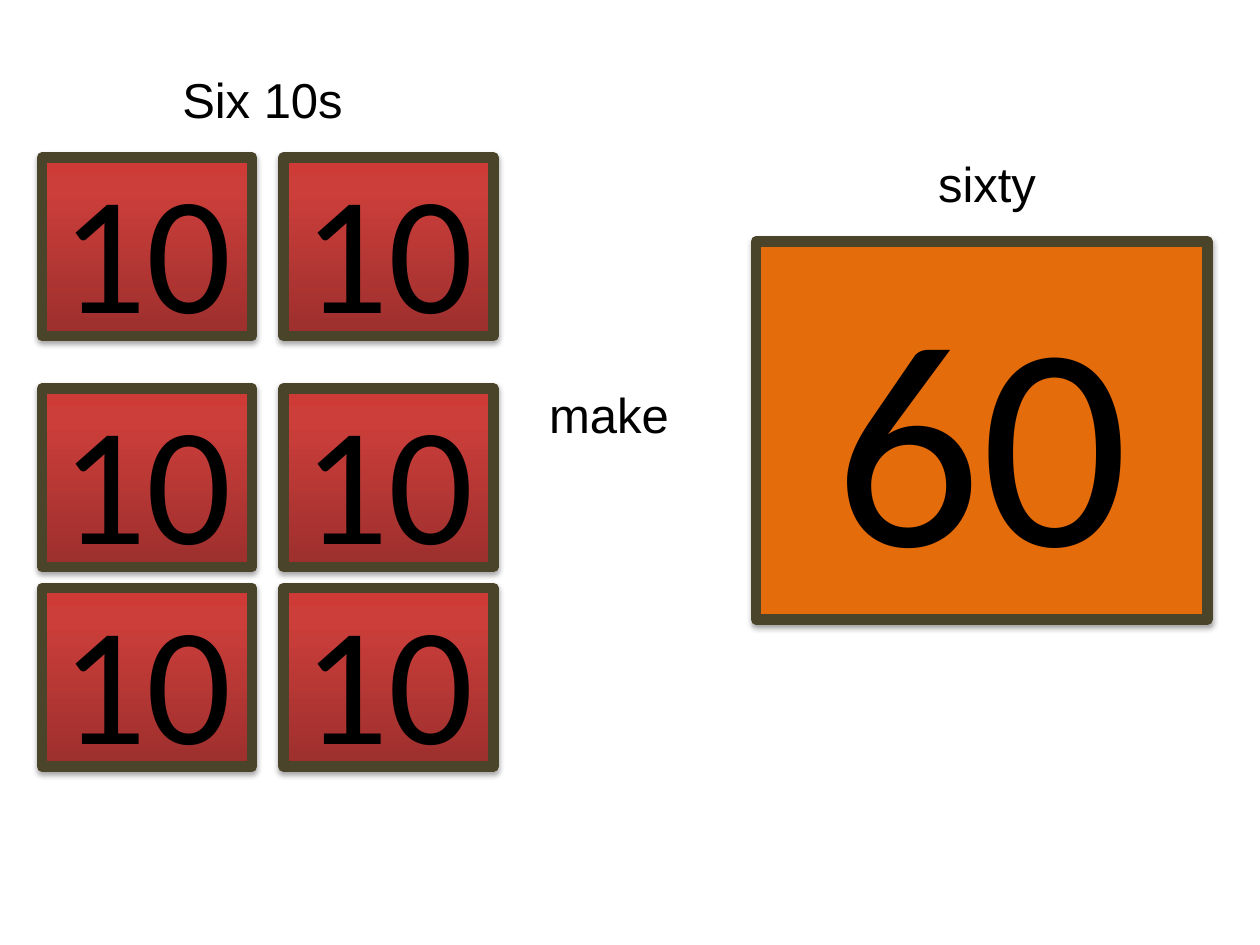
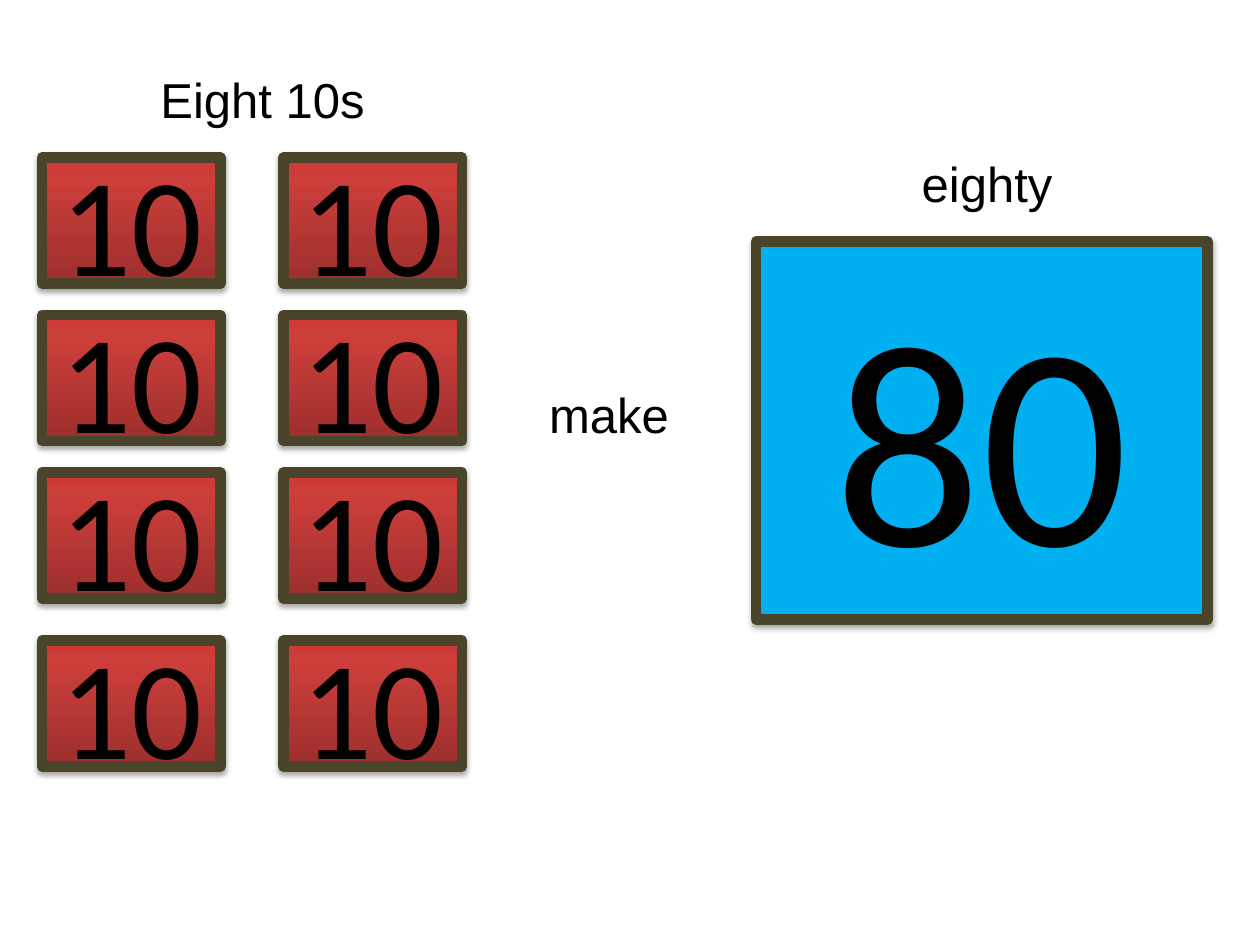
from lxml import etree
from pptx import Presentation
from pptx.dml.color import RGBColor
from pptx.enum.shapes import MSO_SHAPE
from pptx.enum.text import MSO_ANCHOR, MSO_AUTO_SIZE, PP_ALIGN
from pptx.oxml import parse_xml
from pptx.oxml.ns import nsdecls, qn
from pptx.util import Inches, Pt

RECT = MSO_SHAPE.RECTANGLE
MIDDLE, TOP = MSO_ANCHOR.MIDDLE, MSO_ANCHOR.TOP
CENTER = PP_ALIGN.CENTER
GROW = MSO_AUTO_SIZE.SHAPE_TO_FIT_TEXT

BLACK = RGBColor(0x00, 0x00, 0x00)
BORDER = RGBColor(0x4A, 0x45, 0x2A)
ORANGE = RGBColor(0xE4, 0x6C, 0x0A)
BLUE = RGBColor(0x00, 0xB0, 0xF0)
RED_STOPS = (
    (0, RGBColor(0x9C, 0x2F, 0x2D)),
    (80, RGBColor(0xCB, 0x3E, 0x3A)),
    (100, RGBColor(0xCE, 0x3B, 0x37)),
)

# Grid of 120 columns by 90 rows, twelve cells to the inch
CELL = Inches(1) // 12
TITLE_ONLY = 5
TEN_COLUMNS = (4, 27)
LABEL_SIZE = (32, 6.84)


def cells(*counts):
    return [round(n * CELL) for n in counts]


def set_text(sp, text, size, font, anchor):
    tf = sp.text_frame
    tf.text = text
    tf.word_wrap = True
    tf.vertical_anchor = anchor
    p = tf.paragraphs[0]
    p.alignment = CENTER
    r = p.runs[0]
    r.font.size = Pt(size)
    r.font.name = font
    r.font.color.rgb = BLACK


def set_label(sp, text, col, row):
    """Place a heading-sized label in a title or a text box."""
    set_text(sp, text, 28, "Arial", TOP)
    sp.text_frame.auto_size = GROW
    sp.left, sp.top, sp.width, sp.height = cells(col, row, *LABEL_SIZE)


def add_label(slide, text, col, row):
    set_label(slide.shapes.add_textbox(0, 0, 0, 0), text, col, row)


def fill_red(sp):
    """Red gradient, dark at the bottom."""
    sp.fill.gradient()
    sp.fill.gradient_angle = 90
    stops = sp._element.spPr.find(".//" + qn("a:gsLst"))
    for stop in list(stops):
        stops.remove(stop)
    for percent, color in RED_STOPS:
        stop = etree.SubElement(stops, qn("a:gs"), pos=str(percent * 1000))
        etree.SubElement(stop, qn("a:srgbClr"), val=str(color))


def add_soft_shadow(sp):
    sp._element.spPr.append(parse_xml(
        f'<a:effectLst {nsdecls("a")}>'
        '<a:outerShdw blurRad="40000" dist="23000" dir="5400000" rotWithShape="0">'
        '<a:srgbClr val="000000"><a:alpha val="35000"/></a:srgbClr>'
        '</a:outerShdw></a:effectLst>'))


def add_card(slide, number, box, size, color=None):
    """Framed number card; red gradient unless a colour is given."""
    sp = slide.shapes.add_shape(RECT, *cells(*box))
    if color is None:
        fill_red(sp)
    else:
        sp.fill.solid()
        sp.fill.fore_color.rgb = color
    sp.line.color.rgb = BORDER
    sp.line.width = Pt(6)
    add_soft_shadow(sp)
    set_text(sp, number, size, "Calibri", MIDDLE)


def add_tens_slide(prs, title, word, total, color, rows, ten_box, ten_size):
    slide = prs.slides.add_slide(prs.slide_layouts[TITLE_ONLY])
    set_label(slide.shapes.title, title, 9, 6)
    add_label(slide, "make", 42, 36)
    add_label(slide, word, 78, 14)
    for row in rows:
        for col in TEN_COLUMNS:
            add_card(slide, "10", (col, row, *ten_box), ten_size)
    add_card(slide, total, (72, 23, 43, 36), 166, color)


def main():
    prs = Presentation()
    prs.slide_width, prs.slide_height = cells(120, 90)
    add_tens_slide(prs, "Six 10s", "sixty", "60", ORANGE,
                   (15, 37, 56), (20, 17), 96)
    add_tens_slide(prs, "Eight 10s", "eighty", "80", BLUE,
                   (15, 30, 45, 61), (17, 12), 80)
    prs.save("out.pptx")


if __name__ == "__main__":
    main()
